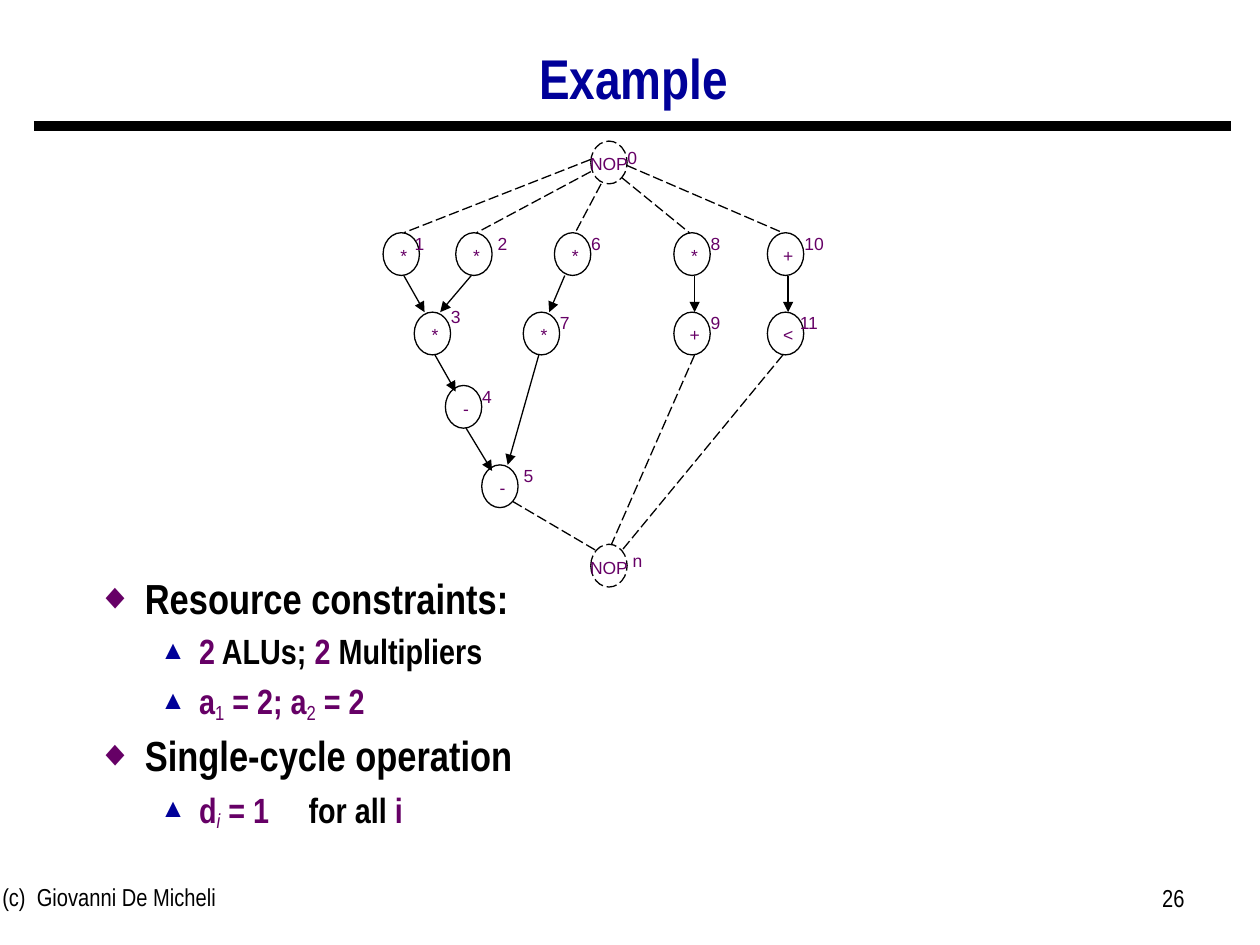
from lxml import etree
from pptx import Presentation
from pptx.dml.color import RGBColor
from pptx.enum.dml import MSO_LINE
from pptx.enum.shapes import MSO_CONNECTOR, MSO_SHAPE
from pptx.enum.text import MSO_ANCHOR, MSO_AUTO_SIZE, PP_ALIGN
from pptx.oxml.ns import qn
from pptx.util import Inches, Pt

DASH = MSO_LINE.LONG_DASH
OVAL = MSO_SHAPE.OVAL
LEFT, MID, RIGHT = PP_ALIGN.LEFT, PP_ALIGN.CENTER, PP_ALIGN.RIGHT

INK, NAVY, PLUM = "000000", "000099", "660066"
HEAD, BODY = "Arial Narrow", "Arial"
THEME = {
    "title": {"name": HEAD, "size": Pt(32), "bold": True, "hue": NAVY},
    "foot": {"name": HEAD, "size": Pt(14), "hue": INK},
    "node": {"name": BODY, "size": Pt(10), "hue": PLUM},
    "top": {"name": HEAD, "size": Pt(24), "bold": True, "hue": INK},
    "sub": {"name": HEAD, "size": Pt(20), "bold": True, "hue": INK},
    "key": {"name": HEAD, "size": Pt(20), "bold": True, "hue": PLUM},
    "low": {"name": HEAD, "size": Pt(20), "bold": False, "hue": PLUM},
    "var": {"name": HEAD, "size": Pt(20), "bold": False, "italic": True, "hue": PLUM},
}


def write(para, words, look):
    run = para.add_run()
    run.text = words
    for key, val in THEME[look].items():
        if key == "hue":
            run.font.color.rgb = RGBColor.from_string(val)
        else:
            setattr(run.font, key, val)
    return run


def label(host, box, words, look, align):
    frame = host.add_textbox(*map(Inches, box)).text_frame
    frame.word_wrap = True
    para = frame.paragraphs[0]
    para.alignment = align
    write(para, words, look)


deck = Presentation()
deck.slide_width, deck.slide_height = Inches(10), Inches(7.5)
slide = deck.slides.add_slide(deck.slide_layouts[1])
shapes = slide.shapes
title, body = slide.placeholders
for hold, box, anchor in (
    (title, (0.78, 0.25, 8.5, 0.79), MSO_ANCHOR.MIDDLE),
    (body, (0.67, 4.54, 8.5, 2.45), MSO_ANCHOR.TOP),
):
    hold.left, hold.top, hold.width, hold.height = map(Inches, box)
    hold.text_frame.auto_size = MSO_AUTO_SIZE.NONE
    hold.text_frame.vertical_anchor = anchor

head = title.text_frame.paragraphs[0]
head.alignment, head.line_spacing = MID, 0.9
write(head, "Example", "title")

LEVELS = [("◆", PLUM, 85, 0.38, 0.38), ("▲", NAVY, 75, 0.81, 0.31)]
ITEMS = [
    (0, [("Resource constraints:", "top")]),
    (1, [("2", "key"), (" ALUs; ", "sub"), ("2 ", "key"), ("Multipliers", "sub")]),
    (1, [("a", "key"), ("1", "low"), (" = 2; a", "key"), ("2", "low"), (" = 2", "key")]),
    (0, [("Single-cycle operation", "top")]),
    (1, [("d", "key"), ("i", "var"), (" = 1", "key"), (" ", "sub"),
         ("for all ", "sub"), ("i", "key")]),
]
frame = body.text_frame
for row, (level, parts) in enumerate(ITEMS):
    para = frame.add_paragraph() if row else frame.paragraphs[0]
    para.level, para.line_spacing, para.alignment = level, 0.9, LEFT
    mark, hue, size, indent, hang = LEVELS[level]
    prop = para._p.get_or_add_pPr()
    prop.set("marL", str(Inches(indent)))
    prop.set("indent", str(-Inches(hang)))
    gap = etree.SubElement(prop, qn("a:spcBef"))
    etree.SubElement(gap, qn("a:spcPct"), val="30000")
    tint = etree.SubElement(prop, qn("a:buClr"))
    etree.SubElement(tint, qn("a:srgbClr"), val=hue)
    etree.SubElement(prop, qn("a:buSzPct"), val=str(size * 1000))
    etree.SubElement(prop, qn("a:buChar"), char=mark)
    for words, look in parts:
        font = write(para, words, look).font
        if look in ("low", "var"):
            font._element.set("baseline", "-16000")
        if words == " ":
            font._element.set("spc", "1800")

label(shapes, (-0.08, 6.95, 3.17, 0.52), "(c)  Giovanni De Micheli", "foot", LEFT)
label(shapes, (7.17, 6.96, 2.33, 0.52), "26", "foot", RIGHT)

X, Y = 3.04, 1.12
COL, ROW = 3.05 / 74, 3.2 / 66
NODES = [
    ("NOP", 40, 0, "0", 43, 0),
    ("*", 0, 15, "1", 2, 14),
    ("*", 14, 15, "2", 18, 14),
    ("*", 12 / 2, 28, "3", 9, 26),
    ("-", 12, 40, "4", 15, 39),
    ("-", 19, 53, "5", 23, 52),
    ("*", 33, 15, "6", 36, 14),
    ("*", 27, 28, "7", 30, 27),
    ("*", 56, 15, "8", 59, 14),
    ("+", 56, 28, "9", 59, 27),
    ("+", 74, 15, "10", 78, 14),
    ("<", 74, 28, "11", 77, 27),
    ("NOP", 40, 66, "n", 44, 66),
]
DASHED = [
    (40, 3, 4, 15), (40, 5, 18, 15), (42, 7, 37, 15), (46, 6, 59, 15), (47, 4, 77, 15),
    (25, 59, 41, 67), (60, 35, 44, 66), (77, 35, 46, 67),
]
ARROWS = [
    (4, 22, 8, 28), (17, 22, 11, 28), (35, 22, 32, 28), (60, 22, 60, 28), (78, 22, 78, 28),
    (10, 35, 14, 41), (16, 47, 21, 54), (30, 35, 24, 53),
]

graph = shapes.add_group_shape().shapes
for sign, col, row, tag, tcol, trow in NODES:
    left, top = X + col * COL, Y + row * ROW
    ring = graph.add_shape(OVAL, *map(Inches, (left, top, 7 * COL, 7 * ROW)))
    ring.shadow.inherit = False
    ring.fill.background()
    ring.line.color.rgb = RGBColor.from_string(INK)
    ring.line.width = Pt(0.75)
    pad, wide = (0, 8)
    if sign == "NOP":
        ring.line.dash_style = DASH
        pad, wide = (3, 13)
    label(graph, (left - pad * COL, top + ROW, wide * COL, 0.27), sign, "node", MID)
    label(graph, (X + tcol * COL, Y + trow * ROW, 10 * COL, 0.27), tag, "node", MID)

LINES = [(shapes, (0.27, 1, 9.77, 1), 6, "rule")]
for kind, edges in (("dash", DASHED), ("arrow", ARROWS)):
    for a, b, c, d in edges:
        ends = (X + a * COL, Y + b * ROW, X + c * COL, Y + d * ROW)
        LINES.append((graph, ends, 0.75, kind))
for host, ends, width, kind in LINES:
    line = host.add_connector(MSO_CONNECTOR.STRAIGHT, *map(Inches, ends))
    line.line.color.rgb = RGBColor.from_string(INK)
    line.line.width = Pt(width)
    if kind == "dash":
        line.line.dash_style = DASH
    prop = line._element.spPr
    if kind == "arrow":
        etree.SubElement(prop.find(qn("a:ln")), qn("a:tailEnd"), type="triangle")
    etree.SubElement(prop, qn("a:effectLst"))

deck.save("out.pptx")
